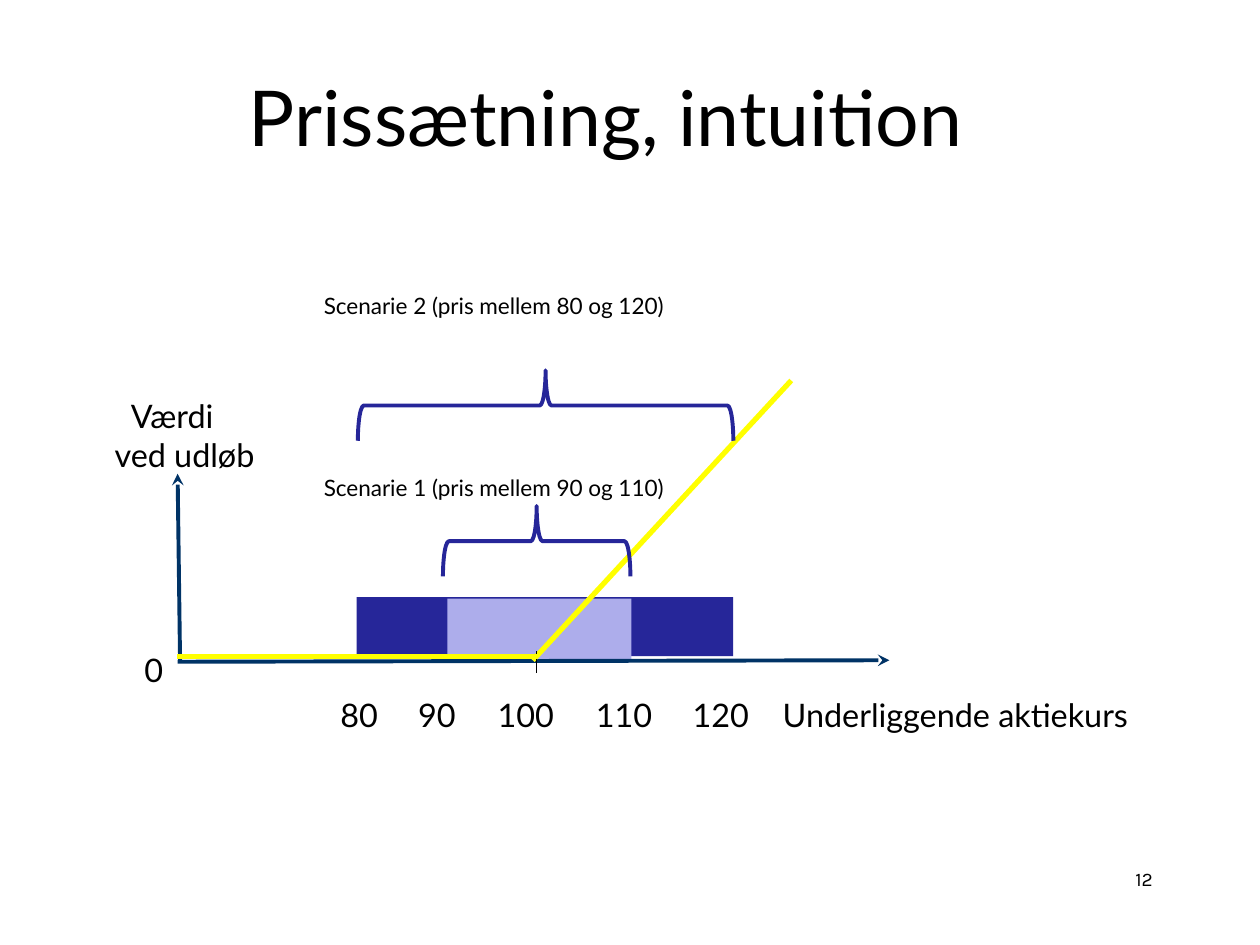
"""Build a slide on the intuition behind option pricing."""
from lxml import etree
from pptx import Presentation
from pptx import util as u
from pptx.dml.color import RGBColor
from pptx.enum import shapes, text
from pptx.oxml import ns

BLACK = RGBColor(0x00, 0x00, 0x00)
BLUE = RGBColor(0x26, 0x26, 0x99)
PALE = RGBColor(0xAD, 0xAD, 0xEB)
NAVY = RGBColor(0x00, 0x33, 0x66)
YELLOW = RGBColor(0xFF, 0xFF, 0x00)
LEFT, MID, RIGHT = text.PP_ALIGN.LEFT, text.PP_ALIGN.CENTER, text.PP_ALIGN.RIGHT


def cms(*vals):
    """Turn numbers into centimetre lengths."""
    return [u.Cm(val) for val in vals]


def style(obj, vals):
    """Set each attribute named in a dict."""
    for name, val in vals.items():
        setattr(obj, name, val)


def write(frame, lines, size, align, face="Lato"):
    """Fill a text frame with one paragraph per line."""
    frame.text = "\n".join(lines)
    for para in frame.paragraphs:
        para.alignment = align
        style(para.runs[0].font, {"name": face, "size": u.Pt(size)})
        para.runs[0].font.color.rgb = BLACK


def label(slide, box, lines, size=18.5, align=LEFT, face="Lato"):
    """Add a text box without margins."""
    frame = slide.shapes.add_textbox(*cms(*box)).text_frame
    style(frame, {"word_wrap": True, "margin_left": 0, "margin_right": 0,
                  "margin_top": 0, "margin_bottom": 0})
    write(frame, lines, size, align, face)
    return frame


def head(slide, words):
    """Place and format the title."""
    title = slide.shapes.title
    names = ("left", "top", "width", "height")
    style(title, dict(zip(names, cms(1.42, 0.74, 21.59, 3.18))))
    title.text_frame.vertical_anchor = text.MSO_ANCHOR.MIDDLE
    write(title.text_frame, [words], 44, MID)


def band(slide, box, color):
    """Add a filled price range."""
    shape = slide.shapes.add_shape(shapes.MSO_SHAPE.RECTANGLE, *cms(*box))
    shape.shadow.inherit = False
    shape.fill.solid()
    shape.fill.fore_color.rgb = color
    shape.line.fill.background()


def brace(slide, box):
    """Add a brace that points upward."""
    shape = slide.shapes.add_shape(shapes.MSO_SHAPE.RIGHT_BRACE, *cms(*box))
    shape.shadow.inherit = False
    shape.rotation = 270
    shape.fill.background()
    shape.line.color.rgb = BLUE
    shape.line.width = u.Pt(2.25)


def line(slide, ends, color, width, arrow=False):
    """Add a straight line, with an arrowhead if wanted."""
    link = slide.shapes.add_connector(shapes.MSO_CONNECTOR.STRAIGHT, *cms(*ends))
    link.line.color.rgb = color
    link.line.width = u.Pt(width)
    if arrow:
        tip = etree.SubElement(link.line._get_or_add_ln(), ns.qn("a:tailEnd"))
        tip.set("type", "stealth")
    etree.SubElement(link._element.spPr, ns.qn("a:effectLst"))


def graph(slide):
    """Draw the axes, the payoff and the braces."""
    line(slide, (3.63, 13.34, 3.58, 9.55), NAVY, 2.25, True)
    line(slide, (3.58, 13.34, 17.93, 13.31), NAVY, 2.25, True)
    line(slide, (10.74, 13.31, 15.95, 7.67), YELLOW, 3)
    line(slide, (10.82, 13.13, 10.82, 13.56), BLACK, 0.75)
    line(slide, (10.82, 13.23, 3.56, 13.23), YELLOW, 3)
    brace(slide, (10.11, 9.02, 1.42, 3.78))
    brace(slide, (10.29, 4.39, 1.42, 7.57))


def names(slide):
    """Label the axes and the scenarios."""
    mids = {80: 7.24, 90: 8.81, 100: 10.6, 110: 12.58, 120: 14.53}
    for price, mid in mids.items():
        label(slide, (mid - 0.8, 14.02, 1.6, 0.8), [str(price)], align=MID)
    label(slide, (15.78, 14.02, 8, 0.8), ["Underliggende aktiekurs"])
    label(slide, (2.29, 13.11, 1, 0.8), ["0"], align=RIGHT)
    value = label(slide, (2.31, 7.98, 3.5, 1.6), ["Værdi", "ved udløb"])
    value.paragraphs[0]._p.get_or_add_pPr().set("marL", str(u.Cm(0.33)))
    for num, top, low, high in ((2, 5.89, 80, 120), (1, 9.55, 90, 110)):
        words = f"Scenarie {num} (pris mellem {low} og {high})"
        label(slide, (6.53, top, 8, 0.6), [words], 12.9)


def main():
    """Build and save the slide."""
    deck = Presentation()
    style(deck, {"slide_width": u.Cm(25.4), "slide_height": u.Cm(19.05)})
    slide = deck.slides.add_slide(deck.slide_layouts[5])
    band(slide, (7.19, 12.04, 7.59, 1.19), BLUE)
    band(slide, (9.02, 12.07, 3.71, 1.22), PALE)
    head(slide, "Prissætning, intuition")
    graph(slide)
    names(slide)
    label(slide, (18.21, 17.48, 5.03, 1), ["12"], 11, RIGHT, "Karla")
    deck.save("out.pptx")


if __name__ == "__main__":
    main()
